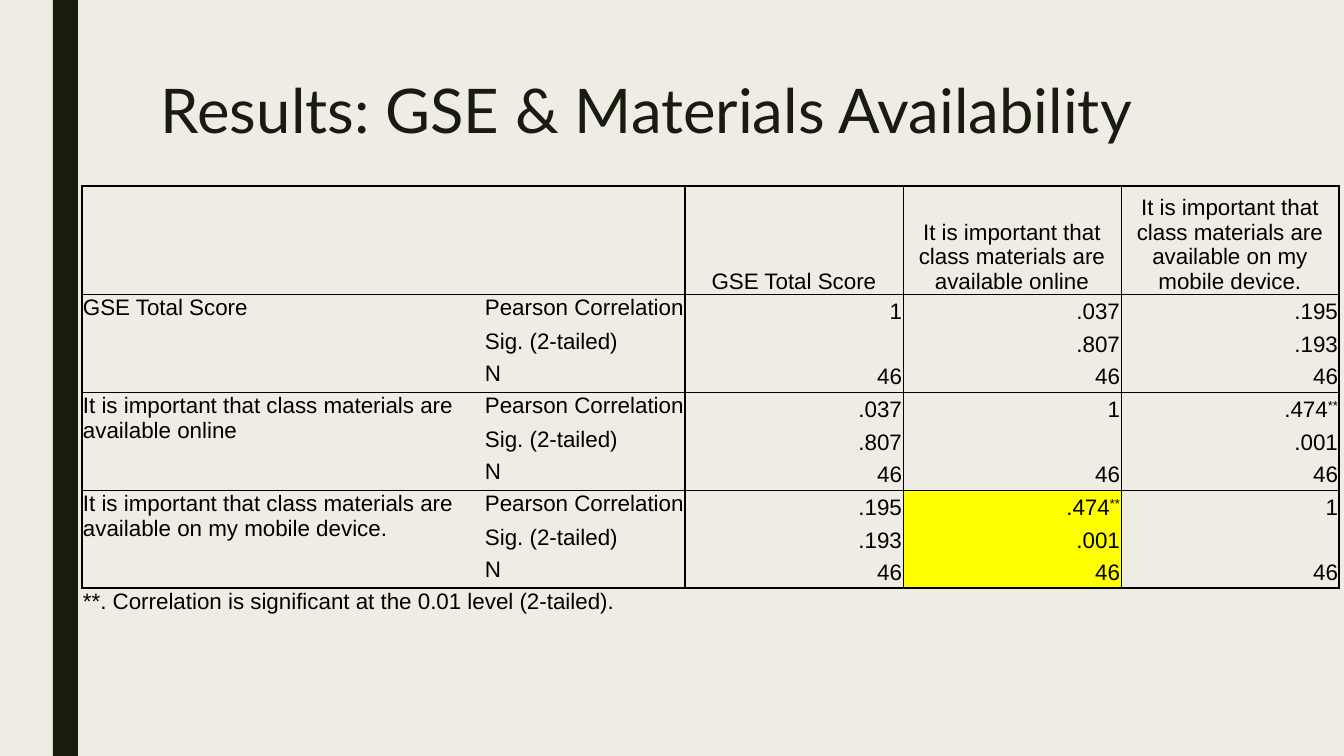
from lxml import etree
from pptx import Presentation
from pptx.dml.color import RGBColor
from pptx.enum.shapes import MSO_SHAPE
from pptx.enum.text import MSO_ANCHOR, PP_ALIGN
from pptx.oxml.ns import qn
from pptx.util import Emu, Pt

RECT = MSO_SHAPE.RECTANGLE
TOP, MIDDLE, BOTTOM = MSO_ANCHOR.TOP, MSO_ANCHOR.MIDDLE, MSO_ANCHOR.BOTTOM
LEFT, CENTER, RIGHT = PP_ALIGN.LEFT, PP_ALIGN.CENTER, PP_ALIGN.RIGHT

CREAM = RGBColor(0xEF, 0xED, 0xE3)
DARK = RGBColor(0x19, 0x1B, 0x0E)
BLACK = RGBColor(0x00, 0x00, 0x00)
YELLOW = RGBColor(0xFF, 0xFF, 0x00)

EMU_PER_PX = 914400 / 100.8

# Table content
SCORE = "GSE Total Score"
ONLINE = "It is important that class materials are available online"
MOBILE = "It is important that class materials are available on my mobile device."
VARIABLES = [SCORE, ONLINE, MOBILE]
STATS = ["Pearson Correlation", "Sig. (2-tailed)", "N"]
VALUES = [
    ["1", ".037", ".195"], ["", ".807", ".193"], ["46", "46", "46"],
    [".037", "1", ".474**"], [".807", "", ".001"], ["46", "46", "46"],
    [".195", ".474**", "1"], [".193", ".001", ""], ["46", "46", "46"],
]
FOOTNOTE = "**. Correlation is significant at the 0.01 level (2-tailed)."

# Table grid: sizes in px, and line widths in points by grid line
COL_WIDTHS = [402, 201, 218, 218, 218]
ROW_HEIGHTS = [101] + [34, 32, 32] * 3 + [34]
NOTE_ROW = len(ROW_HEIGHTS) - 1
THICK, THIN = 1.5, 0.5
V_LINES = {0: THICK, 2: THICK, 3: THIN, 4: THIN, 5: THICK}
H_LINES = {0: THICK, 1: THICK, 4: THIN, 7: THIN, 10: THICK}
MARK_ROWS, MARK_COL = range(7, 10), 3


def px(n):
    return Emu(round(n * EMU_PER_PX))


def write(tf, text, size=16, font="Arial", color=BLACK, align=LEFT, spacing=None):
    """Write one paragraph; closing asterisks become superscript."""
    p = tf.paragraphs[0]
    p.alignment = align
    if spacing:
        p.line_spacing = spacing
    body = text.rstrip("*")
    for part in filter(None, [body, text[len(body):]]):
        r = p.add_run()
        r.text = part
        r.font.size, r.font.name = Pt(size), font
        r.font.color.rgb = color
        if part != body:
            r._r.get_or_add_rPr().set("baseline", "30000")


def add_bar(slide, x, y, w, h):
    sp = slide.shapes.add_shape(RECT, px(x), px(y), px(w), px(h))
    sp.shadow.inherit = False
    sp.fill.solid()
    sp.fill.fore_color.rgb = DARK
    sp.line.fill.background()


def add_title(slide, text, x, y, w, h):
    tf = slide.shapes.add_textbox(px(x), px(y), px(w), px(h)).text_frame
    tf.word_wrap = True
    write(tf, text, size=44, font="Lato", color=DARK, spacing=0.89)


def set_borders(cell, row, col):
    """Give the cell the grid lines that run along its four edges."""
    inside = row < NOTE_ROW
    edges = {
        "a:lnL": V_LINES.get(col) if inside else None,
        "a:lnR": V_LINES.get(col + cell.span_width) if inside else None,
        "a:lnT": H_LINES.get(row),
        "a:lnB": H_LINES.get(row + cell.span_height),
    }
    tc_pr = cell._tc.get_or_add_tcPr()
    for tag, width in edges.items():
        ln = etree.SubElement(tc_pr, qn(tag))
        if width:
            ln.set("w", str(Pt(width)))
            fill = etree.SubElement(ln, qn("a:solidFill"))
            etree.SubElement(fill, qn("a:srgbClr")).set("val", str(BLACK))
        else:
            etree.SubElement(ln, qn("a:noFill"))


def fill_cell(cell, text, anchor=TOP, align=LEFT):
    cell.vertical_anchor = anchor
    write(cell.text_frame, text, align=align)


def add_correlations(slide, x, y):
    rows, cols = len(ROW_HEIGHTS), len(COL_WIDTHS)
    table = slide.shapes.add_table(
        rows, cols, px(x), px(y), px(sum(COL_WIDTHS)), px(sum(ROW_HEIGHTS))).table
    table.first_row = table.horz_banding = False
    for column, width in zip(table.columns, COL_WIDTHS):
        column.width = px(width)
    for row, height in zip(table.rows, ROW_HEIGHTS):
        row.height = px(height)

    # Merged areas
    table.cell(0, 0).merge(table.cell(0, 1))
    for top in range(1, NOTE_ROW, len(STATS)):
        table.cell(top, 0).merge(table.cell(top + len(STATS) - 1, 0))
    table.cell(NOTE_ROW, 0).merge(table.cell(NOTE_ROW, cols - 1))

    # Margins, borders and fills
    for row in range(rows):
        for col in range(cols):
            cell = table.cell(row, col)
            cell.margin_left = cell.margin_right = cell.margin_top = px(1)
            cell.margin_bottom = 0
            set_borders(cell, row, col)
            if row in MARK_ROWS and col == MARK_COL:
                cell.fill.solid()
                cell.fill.fore_color.rgb = YELLOW
            else:
                cell.fill.background()

    # Texts
    for i, name in enumerate(VARIABLES):
        fill_cell(table.cell(0, 2 + i), name, BOTTOM, CENTER)
        fill_cell(table.cell(1 + i * len(STATS), 0), name)
    for row, values in enumerate(VALUES, 1):
        fill_cell(table.cell(row, 1), STATS[(row - 1) % len(STATS)])
        for col, value in enumerate(values, 2):
            fill_cell(table.cell(row, col), value, MIDDLE, RIGHT)
    fill_cell(table.cell(NOTE_ROW, 0), FOOTNOTE)


def main():
    prs = Presentation()
    prs.slide_width, prs.slide_height = px(1344), px(756)
    slide = prs.slides.add_slide(prs.slide_layouts[6])
    slide.background.fill.solid()
    slide.background.fill.fore_color.rgb = CREAM

    add_bar(slide, 53, 0, 25, 756)
    add_title(slide, "Results: GSE & Materials Availability", 151, 76, 1058, 163)
    add_correlations(slide, 82, 186)
    prs.save("out.pptx")


if __name__ == "__main__":
    main()
